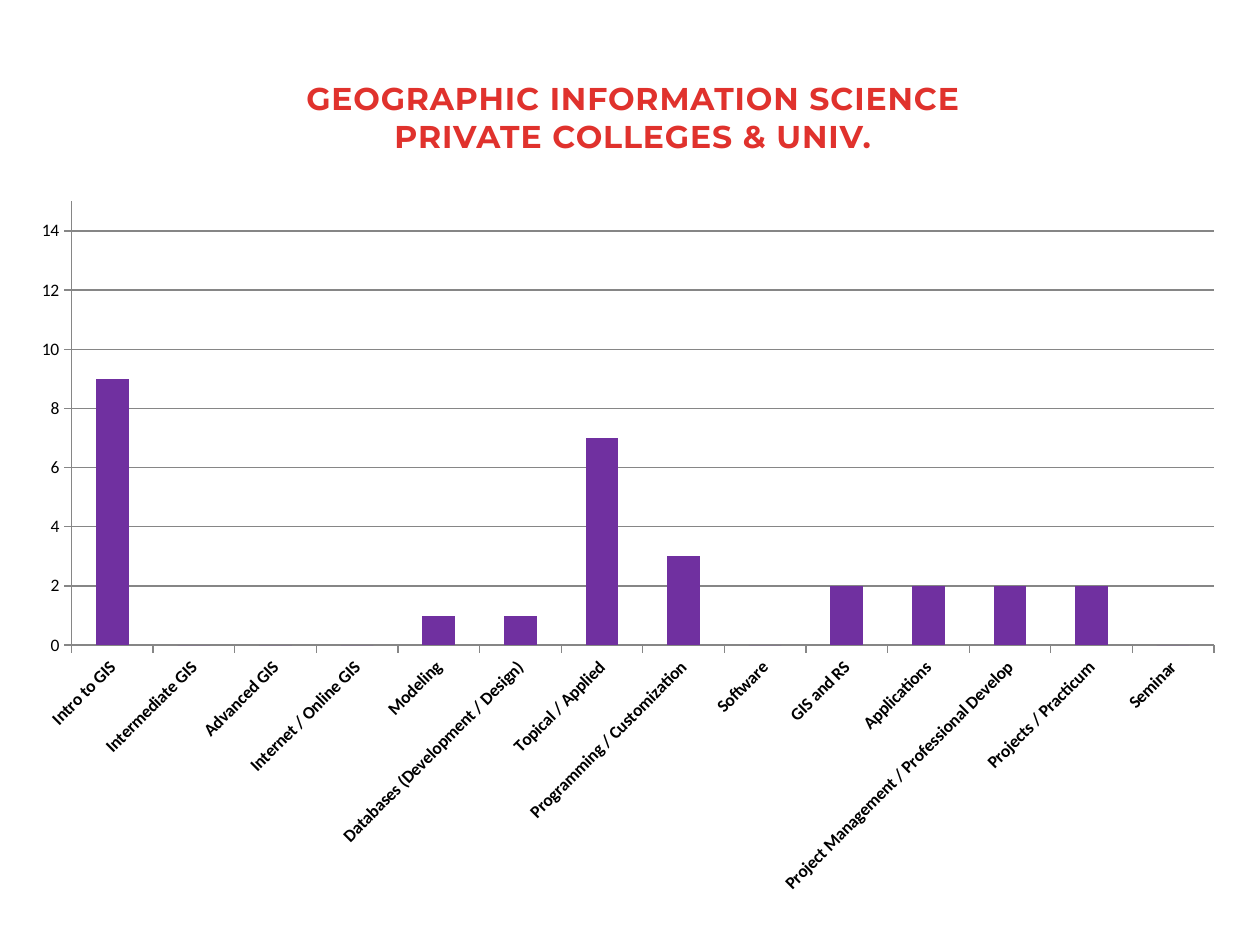
import pptx
import pptx.chart.data
import pptx.dml.color
import pptx.enum.chart
import pptx.enum.text
import pptx.oxml
import pptx.oxml.ns
import pptx.util

RGBColor = pptx.dml.color.RGBColor
RED = RGBColor(0xE0, 0x32, 0x2D)
PURPLE = RGBColor(0x70, 0x30, 0xA0)
BLACK = RGBColor(0, 0, 0)
GRAY = RGBColor(0x86, 0x86, 0x86)

WIDTH, HEIGHT = pptx.util.Inches(10), pptx.util.Inches(7.5)
TITLE_LINES = ["GEOGRAPHIC INFORMATION SCIENCE", "PRIVATE COLLEGES & UNIV."]
COURSES = {
    "Intro to GIS": 9,
    "Intermediate GIS": 0,
    "Advanced GIS": 0,
    "Internet / Online GIS": 0,
    "Modeling": 1,
    "Databases (Development / Design)": 1,
    "Topical / Applied": 7,
    "Programming / Customization": 3,
    "Software": 0,
    "GIS and RS": 2,
    "Applications": 2,
    "Project Management / Professional Develop": 2,
    "Projects / Practicum": 2,
    "Seminar": 0,
}


def region(left, top, width, height):
    """Turn shares of the slide's size into lengths."""
    return (int(left * WIDTH), int(top * HEIGHT),
            int(width * WIDTH), int(height * HEIGHT))


def add_title(page, area):
    frame = page.shapes.add_textbox(*area).text_frame
    frame.word_wrap = True
    frame.text = "\n".join(TITLE_LINES)
    for para in frame.paragraphs:
        para.alignment = pptx.enum.text.PP_ALIGN.CENTER
        para.font.name = "Montserrat"
        para.font.size = pptx.util.Pt(18)
        para.font.bold = True
        para.font.color.rgb = RED
        for span in para.runs:
            span._r.get_or_add_rPr().set("spc", "50")


def set_plot_area(chart, **shares):
    """Fix the inner plot area as shares (x, y, w, h) of the chart."""
    plot_area = chart._chartSpace.chart.plotArea
    for old in plot_area.findall(pptx.oxml.ns.qn("c:layout")):
        plot_area.remove(old)
    sizes = "".join(f'<c:{name} val="{share}"/>' for name, share in shares.items())
    plot_area.insert(0, pptx.oxml.parse_xml(
        f'<c:layout {pptx.oxml.ns.nsdecls("c")}><c:manualLayout>'
        '<c:layoutTarget val="inner"/><c:xMode val="edge"/><c:yMode val="edge"/>'
        f'{sizes}</c:manualLayout></c:layout>'))


def add_course_chart(page, area):
    data = pptx.chart.data.CategoryChartData()
    data.categories = list(COURSES)
    data.add_series("Series 1", list(COURSES.values()))
    chart = page.shapes.add_chart(
        pptx.enum.chart.XL_CHART_TYPE.COLUMN_CLUSTERED, *area, data).chart
    chart.has_legend = False
    chart.has_title = False
    chart.font.name = "Calibri"
    chart.font.size = pptx.util.Pt(10)
    chart.font.color.rgb = BLACK
    set_plot_area(chart, x=0.04, y=0.03, w=0.96, h=0.61)

    plot = chart.plots[0]
    plot.gap_width = 150
    plot.vary_by_categories = False
    fill = plot.series[0].format.fill
    fill.solid()
    fill.fore_color.rgb = PURPLE

    values, courses = chart.value_axis, chart.category_axis
    values.minimum_scale, values.maximum_scale, values.major_unit = 0, 15, 2
    values.has_major_gridlines = True
    for line in (values.format.line, courses.format.line,
                 values.major_gridlines.format.line):
        line.color.rgb = GRAY
        line.width = pptx.util.Pt(0.75)
    for axis in (values, courses):
        axis.major_tick_mark = pptx.enum.chart.XL_TICK_MARK.OUTSIDE
        axis.minor_tick_mark = pptx.enum.chart.XL_TICK_MARK.NONE
        font = axis.tick_labels.font
        font.name = "Calibri"
        font.size = pptx.util.Pt(10)
        font.color.rgb = BLACK
        font.bold = axis is courses
    label_body = courses._element.find(
        f'{pptx.oxml.ns.qn("c:txPr")}/{pptx.oxml.ns.qn("a:bodyPr")}')
    label_body.set("rot", str(-45 * 60000))
    label_body.set("vert", "horz")


def main():
    deck = pptx.Presentation()
    deck.slide_width, deck.slide_height = WIDTH, HEIGHT
    page = deck.slides.add_slide(deck.slide_layouts[6])
    add_course_chart(page, region(0.019, 0.19, 0.945, 0.77))
    add_title(page, region(0.176, 0.077, 0.653, 0.095))
    deck.save("out.pptx")


if __name__ == "__main__":
    main()
